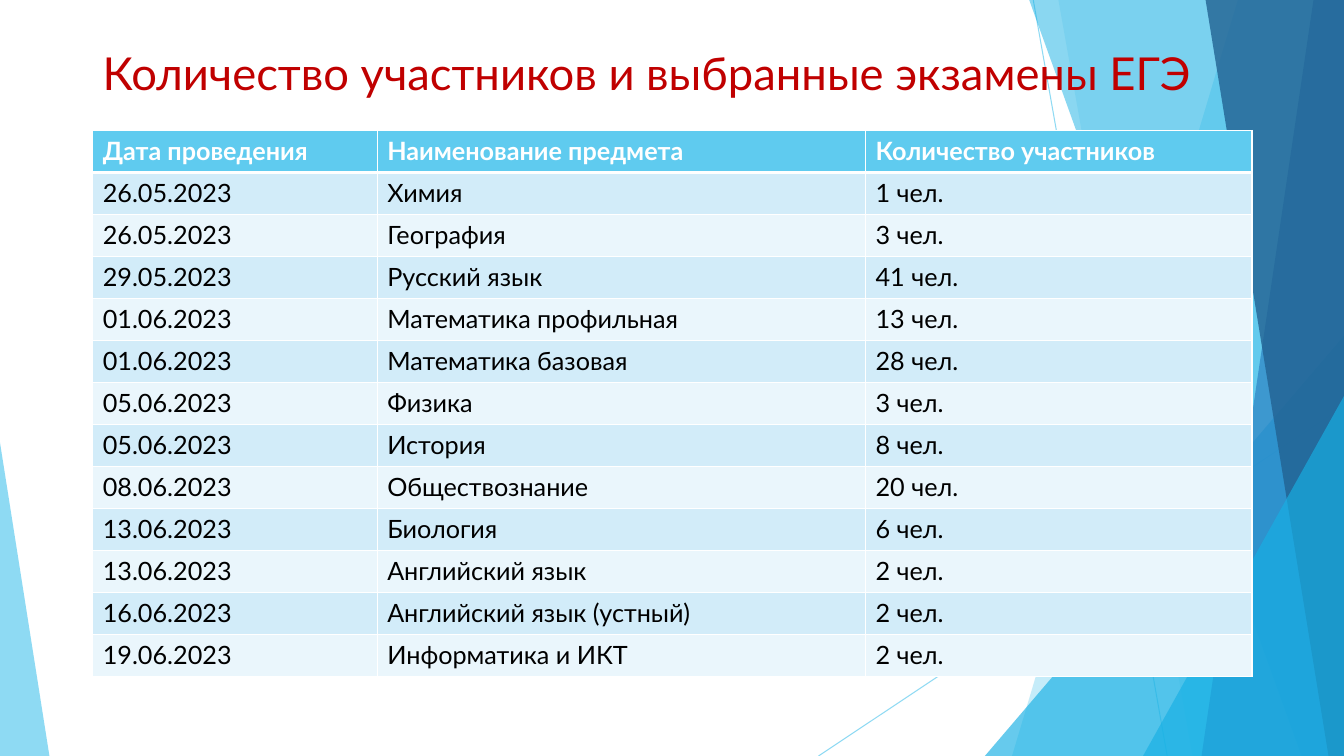
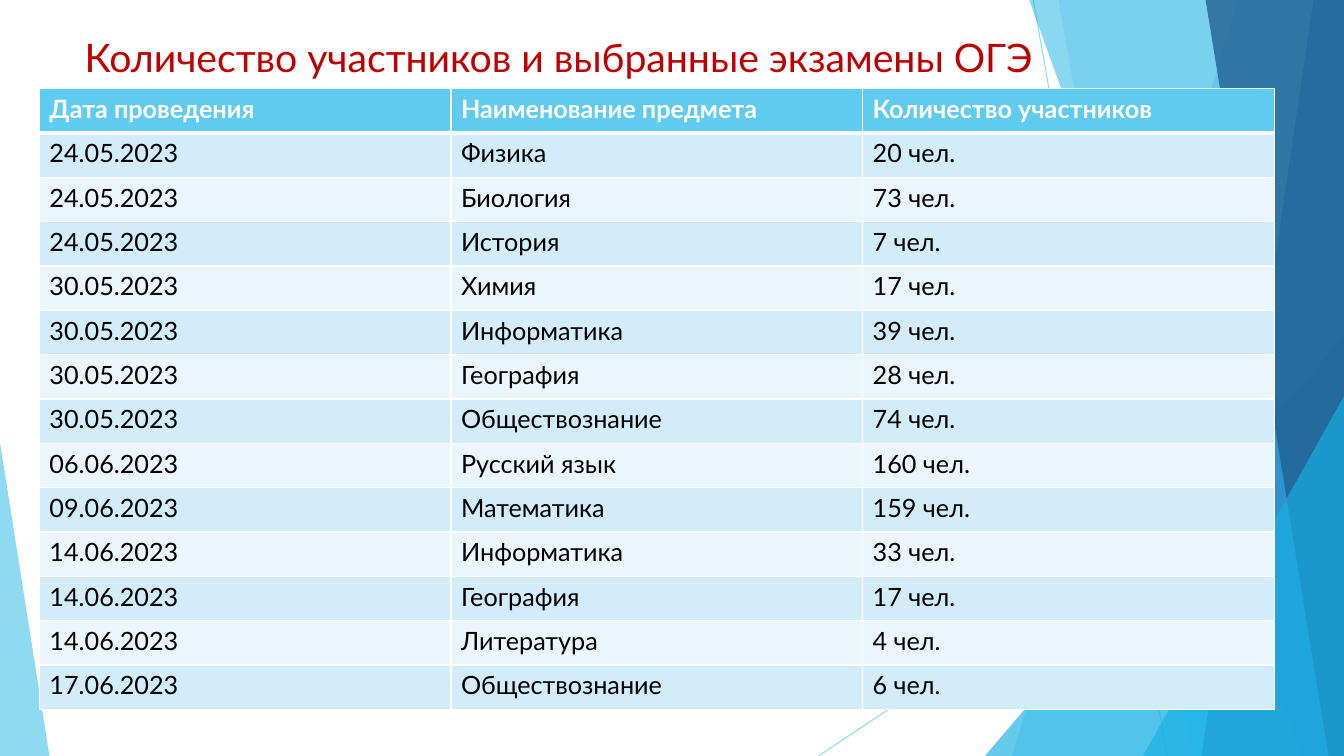
from pptx import Presentation
from pptx.dml.color import RGBColor
from pptx.enum.shapes import MSO_CONNECTOR, MSO_SHAPE
from pptx.enum.text import MSO_ANCHOR
from pptx.oxml.ns import qn
from pptx.util import Inches, Pt
from lxml.etree import SubElement

SLIDE_WIDTH, SLIDE_HEIGHT = Inches(13.33), Inches(7.5)
FONT = "Lato"
COLORS = {
    "title": "C00000",
    "sky": "5FCBEF",
    "cyan": "17B0E4",
    "blue": "2E83C3",
    "navy": "226292",
    "odd_row": "D2ECF9",
    "even_row": "EAF6FC",
    "white": "FFFFFF",
    "black": "000000",
}
HEADINGS = ("Дата проведения", "Наименование предмета", "Количество участников")

STATE_EXAMS = [
    ("26.05.2023", "Химия", 1),
    ("26.05.2023", "География", 3),
    ("29.05.2023", "Русский язык", 41),
    ("01.06.2023", "Математика профильная", 13),
    ("01.06.2023", "Математика базовая", 28),
    ("05.06.2023", "Физика", 3),
    ("05.06.2023", "История", 8),
    ("08.06.2023", "Обществознание", 20),
    ("13.06.2023", "Биология", 6),
    ("13.06.2023", "Английский язык", 2),
    ("16.06.2023", "Английский язык (устный)", 2),
    ("19.06.2023", "Информатика и ИКТ", 2),
]
MAIN_EXAMS = [
    ("24.05.2023", "Физика", 20),
    ("24.05.2023", "Биология", 73),
    ("24.05.2023", "История", 7),
    ("30.05.2023", "Химия", 17),
    ("30.05.2023", "Информатика", 39),
    ("30.05.2023", "География", 28),
    ("30.05.2023", "Обществознание", 74),
    ("06.06.2023", "Русский язык", 160),
    ("09.06.2023", "Математика", 159),
    ("14.06.2023", "Информатика", 33),
    ("14.06.2023", "География", 17),
    ("14.06.2023", "Литература", 4),
    ("17.06.2023", "Обществознание", 6),
]


def across(percent):
    return round(SLIDE_WIDTH * percent / 100)


def down(percent):
    return round(SLIDE_HEIGHT * percent / 100)


def box(left, top, width, height):
    """Turn percentages of the slide into a left, top, width, height tuple."""
    return across(left), down(top), across(width), down(height)


def color(name):
    return RGBColor.from_string(COLORS[name])


def set_opacity(fill_parent, percent):
    for value in fill_parent.iter(qn("a:srgbClr")):
        SubElement(value, qn("a:alpha"), val=str(percent * 1000))


def paint(shape, fill, opacity):
    shape.shadow.inherit = False
    shape.fill.solid()
    shape.fill.fore_color.rgb = color(fill)
    shape.line.fill.background()
    set_opacity(shape.element.spPr, opacity)


def add_thin_line(slide, start_x, start_y, end_x, end_y):
    line = slide.shapes.add_connector(
        MSO_CONNECTOR.STRAIGHT,
        across(start_x), down(start_y), across(end_x), down(end_y))
    line.line.width = Pt(0.75)
    line.line.color.rgb = color("sky")
    set_opacity(line.line._get_or_add_ln(), 70)
    SubElement(line.element.spPr, qn("a:effectLst"))


def add_band(slide, top_x, bottom_x, fill, opacity):
    """Draw a full-height band from a slanted left side to the right edge."""
    builder = slide.shapes.build_freeform(across(top_x), 0)
    builder.add_line_segments([
        (SLIDE_WIDTH, 0), (SLIDE_WIDTH, SLIDE_HEIGHT),
        (across(bottom_x), SLIDE_HEIGHT)])
    paint(builder.convert_to_shape(), fill, opacity)


def add_corner(slide, left, top, width, apex, fill, opacity):
    """Draw a right triangle that stands on the bottom of the slide."""
    triangle = slide.shapes.add_shape(
        MSO_SHAPE.ISOSCELES_TRIANGLE, *box(left, top, width, 100 - top))
    triangle.adjustments[0] = apex
    paint(triangle, fill, opacity)


def add_backdrop(slide):
    add_thin_line(slide, 76.88, 0, 86.85, 100)
    add_thin_line(slide, 100, 53.73, 60.9, 100)
    add_band(slide, 92.1, 75.3, "sky", 36)
    add_band(slide, 78.75, 88.73, "sky", 20)
    add_corner(slide, 73.28, 44.4, 26.72, 1, "cyan", 66)
    add_band(slide, 76.58, 96.83, "cyan", 50)
    add_band(slide, 97.73, 89.4, "blue", 70)
    add_band(slide, 89.7, 98.85, "navy", 80)
    add_corner(slide, 85.05, 52.4, 14.95, 1, "cyan", 66)
    add_corner(slide, 0, 58.53, 3.68, 0, "sky", 70)


def format_text(text_frame, size, color_name, bold=False):
    for paragraph in text_frame.paragraphs:
        for run in paragraph.runs:
            run.font.name = FONT
            run.font.size = Pt(size)
            run.font.bold = bold
            run.font.color.rgb = color(color_name)


def add_title(slide, text, place, size):
    text_frame = slide.shapes.add_textbox(*box(*place)).text_frame
    text_frame.word_wrap = True
    text_frame.vertical_anchor = MSO_ANCHOR.TOP
    text_frame.text = text
    format_text(text_frame, size, "title")


def add_borders(cell, top, bottom):
    properties = cell._tc.get_or_add_tcPr()
    for side, width in (("L", 1), ("R", 1), ("T", top), ("B", bottom)):
        border = SubElement(properties, qn(f"a:ln{side}"), w=str(Pt(width)))
        fill = SubElement(border, qn("a:solidFill"))
        SubElement(fill, qn("a:srgbClr"), val=COLORS["white"])


def format_cell(cell, row):
    """Style a cell by its row: heading first, then alternating stripes."""
    heading = row == 0
    add_borders(cell, 3 if row == 1 else 1, 3 if heading else 1)
    stripe = "odd_row" if row % 2 else "even_row"
    cell.fill.solid()
    cell.fill.fore_color.rgb = color("sky" if heading else stripe)
    format_text(cell.text_frame, 18, "white" if heading else "black", heading)


def add_exam_table(slide, exams, place, column_shares):
    rows = [HEADINGS] + [
        (date, subject, f"{count} чел.") for date, subject, count in exams]
    left, top, width, height = box(*place)
    table = slide.shapes.add_table(
        len(rows), len(HEADINGS), left, top, width, height).table
    for column, share in zip(table.columns, column_shares):
        column.width = round(width * share / sum(column_shares))
    for row_index, texts in enumerate(rows):
        table.rows[row_index].height = height // len(rows)
        for column_index, text in enumerate(texts):
            cell = table.cell(row_index, column_index)
            cell.text = text
            format_cell(cell, row_index)


def add_exam_slide(presentation, title, title_place, title_size,
                   exams, table_place, column_shares):
    slide = presentation.slides.add_slide(presentation.slide_layouts[6])
    add_backdrop(slide)
    add_title(slide, title, title_place, title_size)
    add_exam_table(slide, exams, table_place, column_shares)


def main():
    presentation = Presentation()
    presentation.slide_width = SLIDE_WIDTH
    presentation.slide_height = SLIDE_HEIGHT
    add_exam_slide(
        presentation, "Количество участников и выбранные экзамены ЕГЭ",
        (6.9, 5.33, 86.25, 12.93), 32.4,
        STATE_EXAMS, (6.9, 17.27, 86.25, 72.2), (2.82, 4.84, 3.83))
    add_exam_slide(
        presentation, "Количество участников и выбранные экзамены ОГЭ",
        (5.55, 3.73, 78.23, 11.2), 28,
        MAIN_EXAMS, (2.93, 11.73, 91.88, 82.13), (1, 1, 1))
    presentation.save("out.pptx")


if __name__ == "__main__":
    main()
